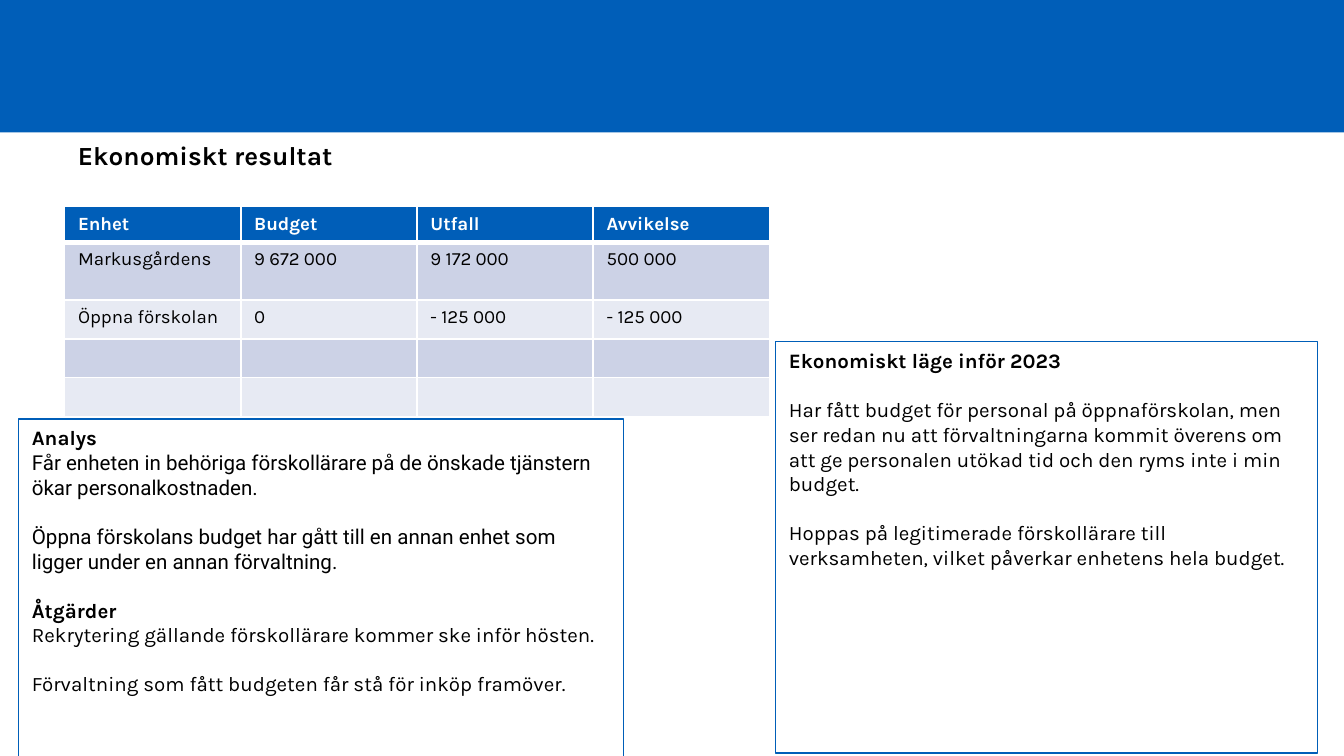
from dataclasses import dataclass

import lxml.etree
import pptx
import pptx.dml.color
import pptx.enum.shapes
import pptx.enum.text
import pptx.oxml.ns
import pptx.util

Pt = pptx.util.Pt
COLORS = {
    "blue": "005EB8",
    "white": "FFFFFF",
    "black": "000000",
    "dark band": "CCD2E6",
    "light band": "E7EAF3",
}
ROWS = [
    ["Enhet", "Budget", "Utfall", "Avvikelse"],
    ["Markusgårdens", "9 672 000", "9 172 000", "500 000"],
    ["Öppna förskolan", "0", "- 125 000", "- 125 000"],
    [""] * 4,
    [""] * 4,
]
ROW_HEIGHTS = [18.7, 31, 20.8, 20.8, 20.8]
COLUMN_WIDTH = 94.4
CELL_SIZE = 10


@dataclass
class Line:
    text: str
    font: str = "Karla"
    bold: bool = False
    size: float = 11
    space_before: float = 0


@dataclass
class Box:
    left: float
    top: float
    width: float
    height: float
    lines: list[Line]
    outlined: bool = True


GAP = 13.1
BOXES = [
    Box(34.6, 71.3, 601.2, 38.9,
        [Line("Ekonomiskt resultat", bold=True, size=14)], outlined=False),
    Box(10, 224.4, 324, 193.7, [
        Line("Analys", bold=True),
        Line("Får enheten in behöriga förskollärare på de önskade tjänstern "
             "ökar personalkostnaden.", "Roboto"),
        Line("Öppna förskolans budget har gått till en annan enhet som "
             "ligger under en annan förvaltning.", "Roboto", space_before=GAP),
        Line("Åtgärder", bold=True, space_before=GAP),
        Line("Rekrytering gällande förskollärare kommer ske inför hösten."),
        Line("Förvaltning som fått budgeten får stå för inköp framöver.",
             space_before=GAP),
    ]),
    Box(415.5, 183, 290.2, 220.5, [
        Line("Ekonomiskt läge inför 2023", bold=True),
        Line("Har fått budget för personal på öppnaförskolan, men ser redan nu att "
             "förvaltningarna kommit överens om att ge personalen utökad tid och "
             "den ryms inte i min budget.", space_before=GAP),
        Line("Hoppas på legitimerade förskollärare till verksamheten, vilket "
             "påverkar enhetens hela budget.", space_before=GAP),
    ]),
]


def rgb(name: str) -> pptx.dml.color.RGBColor:
    """Return the named colour."""
    return pptx.dml.color.RGBColor.from_string(COLORS[name])


def write_line(paragraph, line: Line, color: str = "black") -> None:
    """Fill a paragraph with one formatted line."""
    paragraph.text = line.text
    paragraph.alignment = pptx.enum.text.PP_ALIGN.LEFT
    paragraph.space_before = Pt(line.space_before)
    for run in paragraph.runs:
        run.font.name = line.font
        run.font.size = Pt(line.size)
        run.font.bold = line.bold
        run.font.color.rgb = rgb(color)


def add_rectangle(slide, left: float, top: float, width: float, height: float):
    """Add a rectangle without shadow."""
    shape = slide.shapes.add_shape(
        pptx.enum.shapes.MSO_SHAPE.RECTANGLE, Pt(left), Pt(top), Pt(width), Pt(height))
    shape.shadow.inherit = False
    return shape


def add_box(slide, box: Box) -> None:
    """Add a text box or an outlined rectangle with its lines."""
    if box.outlined:
        shape = add_rectangle(slide, box.left, box.top, box.width, box.height)
        shape.fill.background()
        shape.line.color.rgb = rgb("blue")
        shape.line.width = Pt(0.75)
    else:
        shape = slide.shapes.add_textbox(
            Pt(box.left), Pt(box.top), Pt(box.width), Pt(box.height))
    text_frame = shape.text_frame
    text_frame.word_wrap = True
    text_frame.vertical_anchor = pptx.enum.text.MSO_ANCHOR.TOP
    for index, line in enumerate(box.lines):
        paragraph = text_frame.add_paragraph() if index else text_frame.paragraphs[0]
        write_line(paragraph, line)


def add_borders(cell, widths: dict[str, float]) -> None:
    """Draw white borders on the sides of a cell."""
    qn = pptx.oxml.ns.qn
    properties = cell._tc.get_or_add_tcPr()
    for side, width in widths.items():
        border = lxml.etree.SubElement(properties, qn(f"a:ln{side}"), w=str(Pt(width)))
        fill = lxml.etree.SubElement(border, qn("a:solidFill"))
        lxml.etree.SubElement(fill, qn("a:srgbClr"), val=COLORS["white"])


def add_result_table(slide) -> None:
    """Add the budget table with a blue header and banded rows."""
    column_count = len(ROWS[0])
    table = slide.shapes.add_table(
        len(ROWS), column_count, Pt(34.6), Pt(110.5),
        Pt(COLUMN_WIDTH * column_count), Pt(sum(ROW_HEIGHTS))).table
    for column in table.columns:
        column.width = Pt(COLUMN_WIDTH)
    for row_index, values in enumerate(ROWS):
        table.rows[row_index].height = Pt(ROW_HEIGHTS[row_index])
        header = row_index == 0
        band = "blue" if header else "dark band" if row_index % 2 else "light band"
        widths = {"L": 1, "R": 1, "T": 3 if row_index == 1 else 1, "B": 3 if header else 1}
        for column_index, value in enumerate(values):
            cell = table.cell(row_index, column_index)
            add_borders(cell, widths)
            cell.fill.solid()
            cell.fill.fore_color.rgb = rgb(band)
            paragraph = cell.text_frame.paragraphs[0]
            write_line(paragraph, Line(value, bold=header, size=CELL_SIZE),
                       "white" if header else "black")
            if not value:
                lxml.etree.SubElement(paragraph._p, pptx.oxml.ns.qn("a:endParaRPr"),
                                      sz=str(CELL_SIZE * 100))


def main() -> None:
    """Build and save the slide."""
    presentation = pptx.Presentation()
    presentation.slide_width = Pt(720)
    presentation.slide_height = Pt(405)
    slide = presentation.slides.add_slide(presentation.slide_layouts[6])
    banner = add_rectangle(slide, 0, 0, 720, 71)
    banner.fill.solid()
    banner.fill.fore_color.rgb = rgb("blue")
    banner.line.fill.background()
    title, *panels = BOXES
    add_box(slide, title)
    add_result_table(slide)
    for panel in panels:
        add_box(slide, panel)
    presentation.save("out.pptx")


if __name__ == "__main__":
    main()
